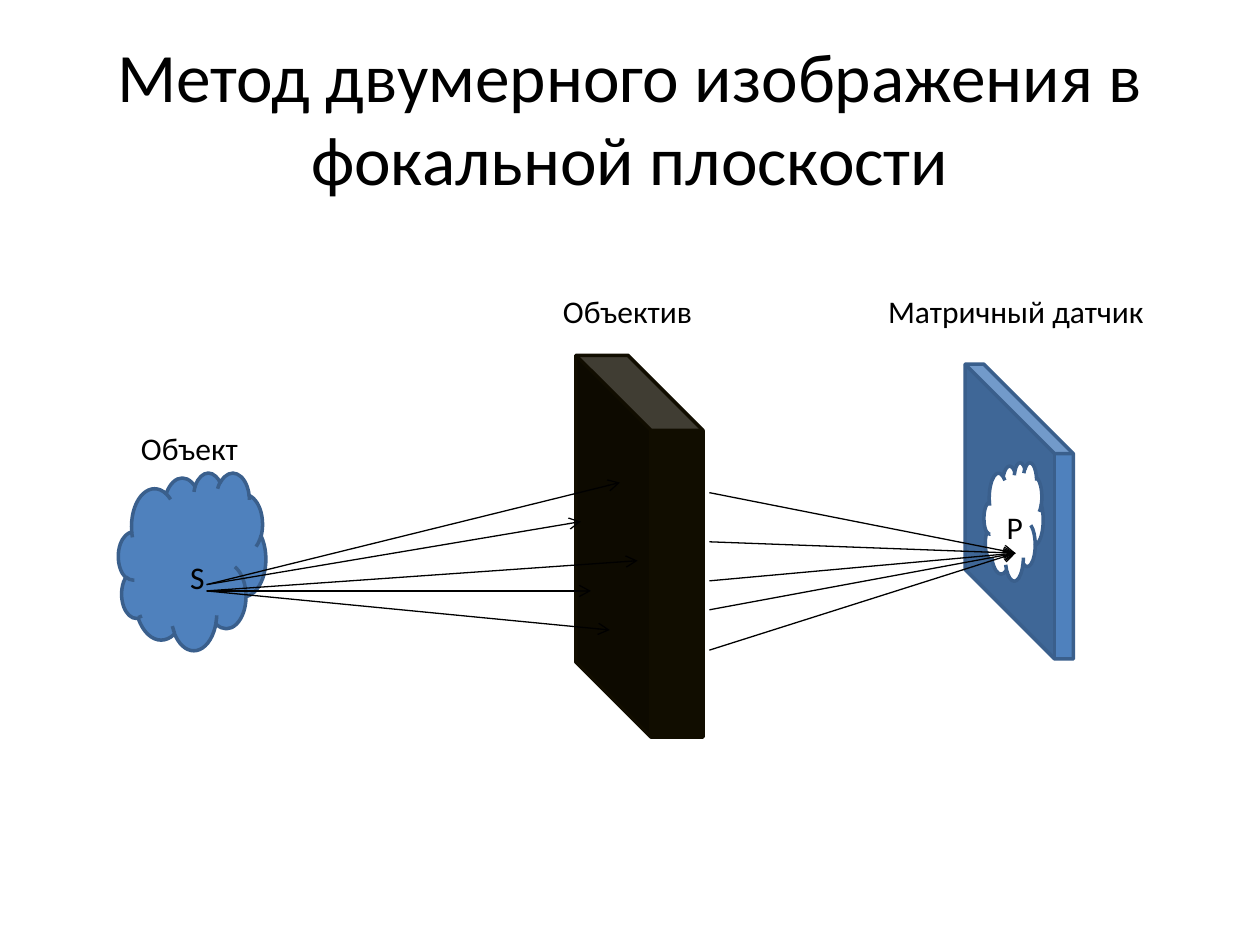
import pptx
import pptx.util
import pptx.dml.color
import pptx.enum.shapes
import pptx.enum.text
import pptx.oxml
import pptx.oxml.ns

Inches, Pt = pptx.util.Inches, pptx.util.Pt
RGBColor = pptx.dml.color.RGBColor
SHAPES = pptx.enum.shapes.MSO_SHAPE
ALIGN = pptx.enum.text.PP_ALIGN
ANCHOR = pptx.enum.text.MSO_ANCHOR

BLACK = RGBColor(0x00, 0x00, 0x00)
WHITE = RGBColor(0xFF, 0xFF, 0xFF)
BLUE = RGBColor(0x4F, 0x81, 0xBD)
DARK_BLUE = RGBColor(0x3A, 0x5F, 0x8C)
LENS_DARK = RGBColor(0x11, 0x0D, 0x00)

# Content: boxes are left, top, width, height in inches
TITLE = "Метод двумерного изображения в фокальной плоскости"
TITLE_BOX = (0.5, 0.3, 9, 1.25)
LABELS = [
    ("Матричный датчик", (6.95, 2.27, 2.26, 0.4)),
    ("Объект", (1.02, 3.36, 0.98, 0.4)),
    ("Объектив", (4.37, 2.27, 1.24, 0.4)),
    ("S", (1.41, 4.38, 0.32, 0.4)),
    ("P", (7.89, 3.98, 0.33, 0.4)),
]
# Kind, box, fill, outline, cube depth
BODIES = [
    (SHAPES.CUBE, (7.66, 2.89, 0.86, 2.34), BLUE, DARK_BLUE, 0.827),
    (SHAPES.CLOUD, (7.81, 3.67, 0.47, 0.94), WHITE, DARK_BLUE, None),
    (SHAPES.CLOUD, (0.94, 3.75, 1.17, 1.41), BLUE, DARK_BLUE, None),
    (SHAPES.CUBE, (4.57, 2.82, 1.01, 3.03), LENS_DARK, LENS_DARK, 0.59),
]
# Rays from the object: start height, then the point reached on the lens
SOURCE_X = 1.64
RAYS_OUT = [
    (4.64, (4.92, 3.83)),
    (4.64, (4.61, 4.14)),
    (4.69, (5.06, 4.45)),
    (4.69, (4.69, 4.69)),
    (4.69, (4.84, 5)),
]
# Rays leaving the lens at these heights meet at one focus
LENS_EXIT_X = 5.63
EXIT_HEIGHTS = [3.91, 4.3, 4.61, 4.84, 5.16]
FOCUS = (8.06, 4.39)


def add_text(slide, text, box, size=18, wrap=False, align=ALIGN.LEFT, anchor=ANCHOR.TOP):
    frame = slide.shapes.add_textbox(*map(Inches, box)).text_frame
    frame.word_wrap = wrap
    frame.vertical_anchor = anchor
    paragraph = frame.paragraphs[0]
    paragraph.alignment = align
    run = paragraph.add_run()
    run.text = text
    run.font.name = "Calibri"
    run.font.size = Pt(size)
    run.font.color.rgb = BLACK


def add_body(slide, kind, box, fill, outline, depth):
    shape = slide.shapes.add_shape(kind, *map(Inches, box))
    shape.shadow.inherit = False
    shape.fill.solid()
    shape.fill.fore_color.rgb = fill
    shape.line.color.rgb = outline
    shape.line.width = Pt(2)
    if depth is not None:
        shape.adjustments[0] = depth
        # Cubes recede to the left
        shape._element.spPr.find(pptx.oxml.ns.qn("a:xfrm")).set("flipH", "1")


def add_ray(slide, start, end):
    ray = slide.shapes.add_connector(
        pptx.enum.shapes.MSO_CONNECTOR.STRAIGHT, *map(Inches, start + end))
    ray.line.color.rgb = BLACK
    ray.line.width = Pt(0.75)
    namespace = pptx.oxml.ns.nsdecls("a")
    ray.line._get_or_add_ln().append(
        pptx.oxml.parse_xml(f'<a:tailEnd {namespace} type="arrow"/>'))
    ray._element.spPr.append(pptx.oxml.parse_xml(f"<a:effectLst {namespace}/>"))


def main():
    presentation = pptx.Presentation()
    presentation.slide_width = Inches(10)
    presentation.slide_height = Inches(7.5)
    slide = presentation.slides.add_slide(presentation.slide_layouts[6])

    # Object, lens and sensor
    for body in BODIES:
        add_body(slide, *body)

    # Title and labels
    add_text(slide, TITLE, TITLE_BOX, size=39.6, wrap=True,
             align=ALIGN.CENTER, anchor=ANCHOR.MIDDLE)
    for text, box in LABELS:
        add_text(slide, text, box)

    # Light rays
    for start_y, end in RAYS_OUT:
        add_ray(slide, (SOURCE_X, start_y), end)
    for exit_y in EXIT_HEIGHTS:
        add_ray(slide, (LENS_EXIT_X, exit_y), FOCUS)

    presentation.save("out.pptx")


if __name__ == "__main__":
    main()
